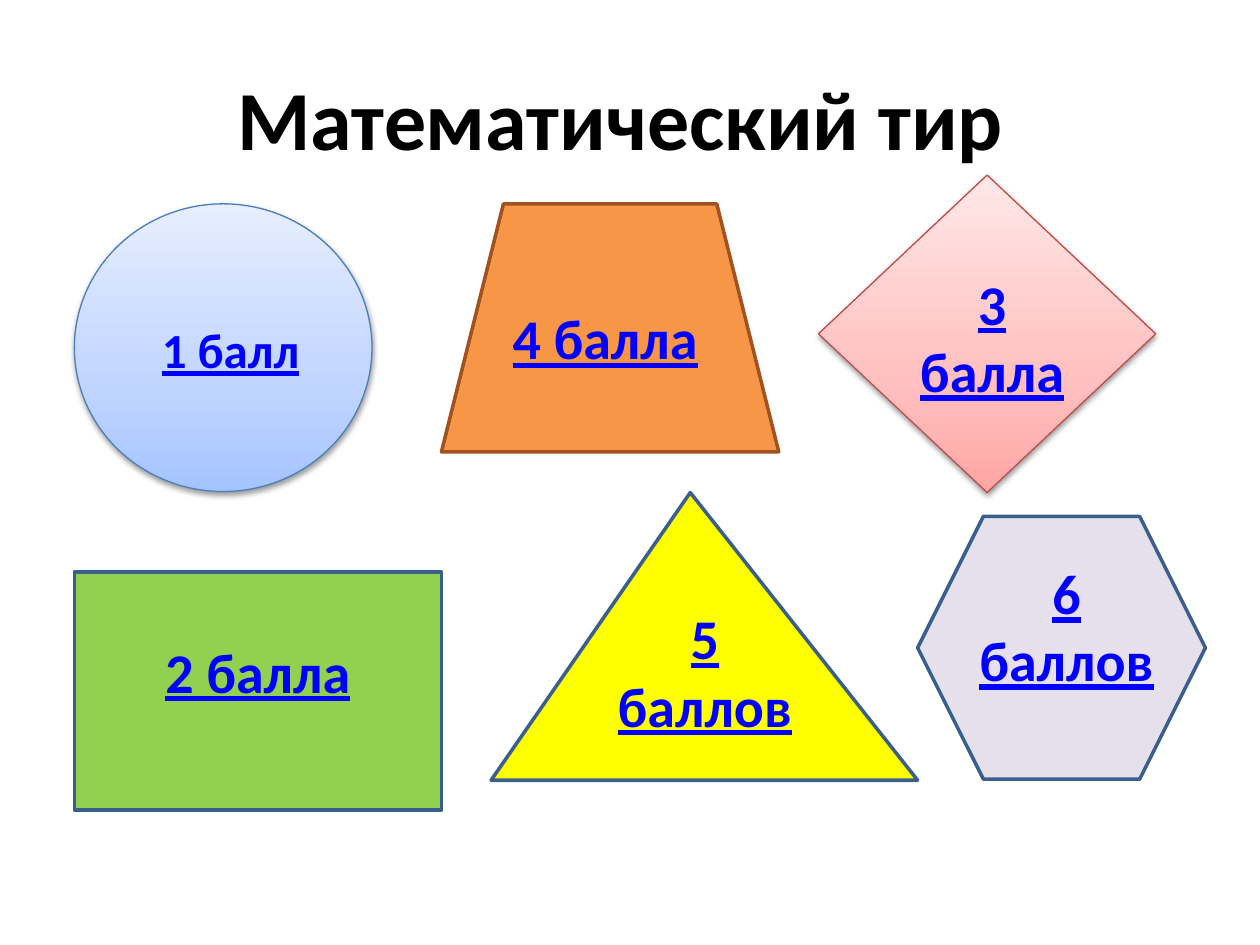
from copy import deepcopy
from dataclasses import dataclass

from lxml import etree
from pptx import Presentation
from pptx import util as u
from pptx.dml.color import RGBColor
from pptx.enum import shapes, text
from pptx.oxml.ns import qn


@dataclass(frozen=True)
class Theme:
    font: str = "Calibri"
    title_size: int = 48
    score_size: int = 32
    small_score_size: int = 28
    title: str = "000000"
    link: str = "0000FF"
    outline: str = "3A5F8C"
    blue_line: str = "4B7EBC"
    orange_line: str = "A15221"
    red_line: str = "BF4C48"
    orange: str = "F79646"
    green: str = "92D050"
    yellow: str = "FFFF00"
    lilac: str = "E6E0EC"
    blue_shades: tuple = ("A4C4FF", "BFD4FF", "E6EEFF")
    red_shades: tuple = ("FFA6A5", "FFC0BF", "FFE7E7")
    shade_positions: tuple = (0, 0.35, 1)


def box(*lengths):
    return [u.Cm(length) for length in lengths]


class TargetSlide:
    def __init__(self, slide, theme):
        self.slide = slide
        self.theme = theme

    def set_wording(self, frame, wording, size, color, underline=None):
        frame.word_wrap = True
        frame.text = wording
        paragraph = frame.paragraphs[0]
        paragraph.alignment = text.PP_ALIGN.CENTER
        font = paragraph.runs[0].font
        font.name, font.size = self.theme.font, u.Pt(size)
        font.bold, font.underline = True, underline
        font.color.rgb = RGBColor.from_string(color)

    def title(self, wording, place):
        heading = self.slide.shapes.title
        heading.left, heading.top, heading.width, heading.height = box(*place)
        heading.text_frame.vertical_anchor = text.MSO_ANCHOR.MIDDLE
        self.set_wording(heading.text_frame, wording,
                         self.theme.title_size, self.theme.title)

    def target(self, kind, place, fill, line, line_width=2, adjustment=None):
        """Draw a flat target, or a shaded one with a shadow if fill is a tuple."""
        figure = self.slide.shapes.add_shape(kind, *box(*place))
        figure.shadow.inherit = False
        if adjustment is not None:
            figure.adjustments[0] = adjustment
        if isinstance(fill, tuple):
            self.shade(figure, fill)
            self.drop_shadow(figure)
        else:
            figure.fill.solid()
            figure.fill.fore_color.rgb = RGBColor.from_string(fill)
        figure.line.color.rgb = RGBColor.from_string(line)
        figure.line.width = u.Pt(line_width)

    def shade(self, figure, shades):
        """Fill with three shades, the first one at the bottom."""
        figure.fill.gradient()
        figure.fill.gradient_angle = 90
        stops = figure.element.spPr.find(".//" + qn("a:gsLst"))
        stops.append(deepcopy(stops[-1]))
        for stop, shade, position in zip(
            figure.fill.gradient_stops, shades, self.theme.shade_positions
        ):
            stop.color.rgb = RGBColor.from_string(shade)
            stop.position = position

    def drop_shadow(self, figure):
        effects = figure.element.spPr.find(qn("a:effectLst"))
        shadow = etree.SubElement(
            effects, qn("a:outerShdw"), blurRad="40000", dist="20000",
            dir="5400000", rotWithShape="0",
        )
        color = etree.SubElement(shadow, qn("a:srgbClr"), val="000000")
        etree.SubElement(color, qn("a:alpha"), val="38000")

    def score(self, wording, place, size=None):
        label = self.slide.shapes.add_textbox(*box(*place))
        label.text_frame.auto_size = text.MSO_AUTO_SIZE.SHAPE_TO_FIT_TEXT
        self.set_wording(label.text_frame, wording, size or self.theme.score_size,
                         self.theme.link, underline=True)


def main():
    deck = Presentation()
    deck.slide_width, deck.slide_height = box(25.4, 19.05)
    theme = Theme()
    title_only = deck.slide_layouts[5]
    page = TargetSlide(deck.slides.add_slide(title_only), theme)
    kinds = shapes.MSO_SHAPE

    # The trailing space shifts the centred title slightly to the left.
    page.title("Математический тир ", (1.27, 0.76, 22.86, 3.18))

    page.target(kinds.OVAL, (1.5, 4.11, 6, 5.8),
                theme.blue_shades, theme.blue_line, 0.75)
    page.score("1 балл", (2.5, 6.32, 4.3, 1.45), theme.small_score_size)

    page.target(kinds.TRAPEZOID, (8.9, 4.11, 6.8, 5), theme.orange, theme.orange_line)
    page.score("4 балла", (9.9, 6, 4.6, 1.62))

    page.target(kinds.DIAMOND, (16.5, 3.53, 6.8, 6.4),
                theme.red_shades, theme.red_line, 0.75)
    page.score("3 балла", (17.9, 5.3, 4.2, 3))

    page.target(kinds.RECTANGLE, (1.5, 11.53, 7.4, 4.8), theme.green, theme.outline)
    page.score("2 балла", (2.5, 12.72, 5.4, 1.62))

    page.target(kinds.ISOSCELES_TRIANGLE, (9.9, 9.93, 8.6, 5.8),
                theme.yellow, theme.outline, adjustment=0.467)
    page.score("5 баллов", (11.96, 12.05, 4.5, 3))

    page.target(kinds.HEXAGON, (18.5, 10.41, 5.8, 5.3), theme.lilac, theme.outline)
    page.score("6 баллов", (19.3, 11.13, 4.4, 3))

    deck.save("out.pptx")


if __name__ == "__main__":
    main()
